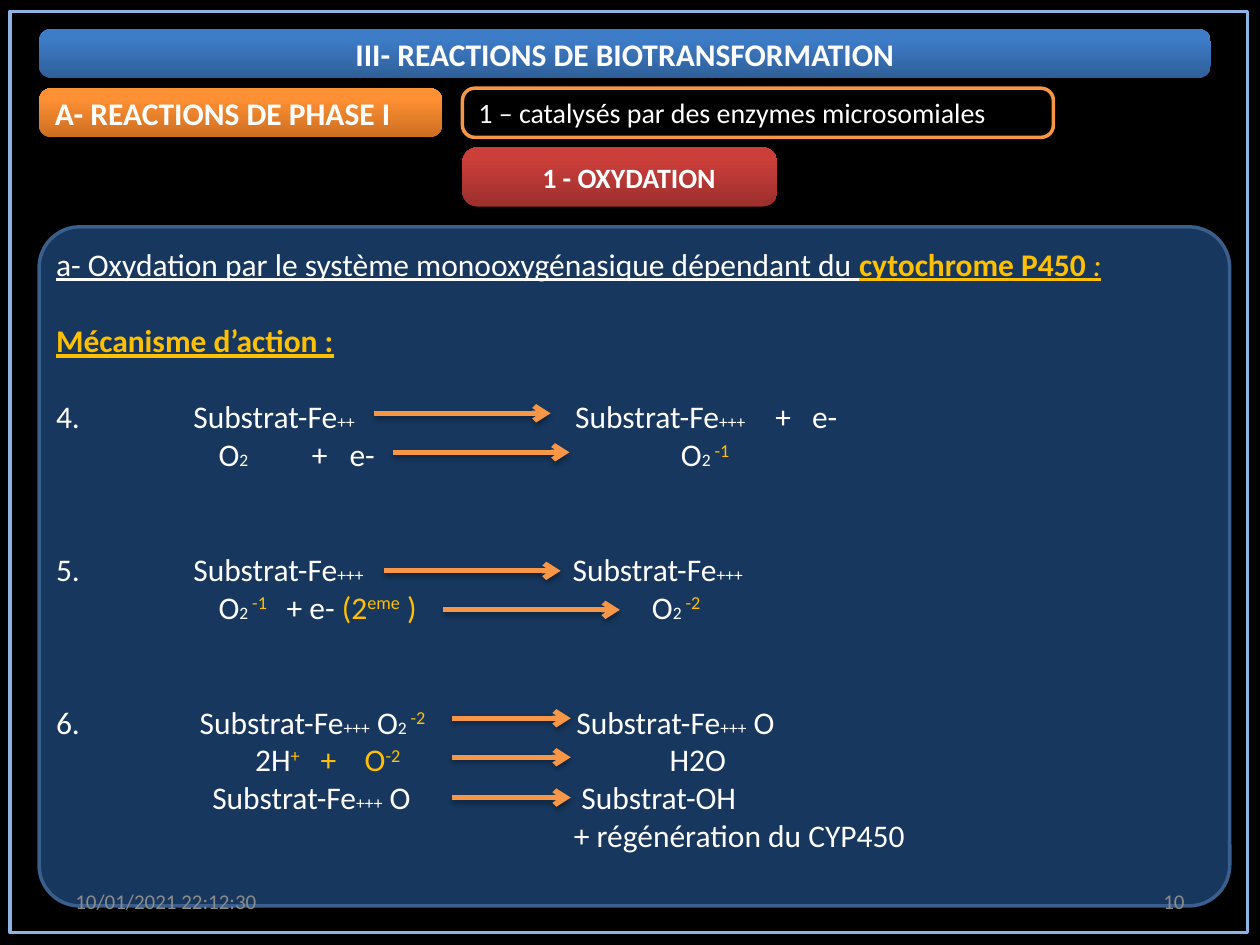
from lxml import etree
from pptx import Presentation
from pptx.dml.color import RGBColor
from pptx.enum.shapes import MSO_CONNECTOR, MSO_SHAPE
from pptx.enum.text import MSO_ANCHOR, PP_ALIGN
from pptx.oxml.ns import qn
from pptx.util import Inches, Pt

BLACK = RGBColor(0x00, 0x00, 0x00)
WHITE = RGBColor(0xFF, 0xFF, 0xFF)
GOLD = RGBColor(0xFF, 0xC0, 0x00)
ORANGE = RGBColor(0xF7, 0x96, 0x46)
FRAME_BLUE = RGBColor(0x8E, 0xB4, 0xE3)
NAVY = RGBColor(0x17, 0x37, 0x5E)
NAVY_EDGE = RGBColor(0x3A, 0x5F, 0x8C)
GREY = RGBColor(0x8C, 0x8C, 0x8C)
BLUE_GRADIENT = RGBColor(0x2F, 0x5F, 0x99), RGBColor(0x3D, 0x7C, 0xC7)
ORANGE_GRADIENT = RGBColor(0xCC, 0x6E, 0x20), RGBColor(0xFF, 0x90, 0x34)
RED_GRADIENT = RGBColor(0x9C, 0x2F, 0x2D), RGBColor(0xCB, 0x3E, 0x3A)

PLAIN = {"size": Pt(18), "color": WHITE}
SMALL = {"size": Pt(10), "color": WHITE}
YELLOW = {"size": Pt(18), "color": GOLD}
RAISED = {**YELLOW, "raised": True}
LINK = {**PLAIN, "underline": True}
KEY = {**YELLOW, "underline": True, "bold": True}
KEY_COLON = {**YELLOW, "underline": True, "italic": True}

BLANK_LINE = 22  # points taken by one 18 pt line
# Each line: blank lines above, tab stops in inches, styled runs
MECHANISM = [
    (0, [], [("a- Oxydation par le système monooxygénasique dépendant du ", LINK),
             ("cytochrome P450", KEY), ("\u00a0:", KEY_COLON)]),
    (1, [], [("Mécanisme d’action :", KEY)]),
    (1, [1.09, 4.12, 5.71, 6.0],
     [("4.\tSubstrat-Fe", PLAIN), ("++", SMALL), ("\tSubstrat-Fe", PLAIN),
      ("+++", SMALL), ("\t+\te-", PLAIN)]),
    (0, [1.29, 2.03, 2.33, 4.96],
     [("\tO", PLAIN), ("2", SMALL), ("\t+\te-\tO", PLAIN), ("2 ", SMALL), ("-1", RAISED)]),
    (2, [1.09, 4.1],
     [("5.\tSubstrat-Fe", PLAIN), ("+++", SMALL), ("\tSubstrat-Fe", PLAIN), ("+++", SMALL)]),
    (0, [1.29, 1.83, 4.73],
     [("\tO", PLAIN), ("2 ", SMALL), ("-1", RAISED), ("\t+ e- ", PLAIN), ("(2", YELLOW),
      ("eme", RAISED), (" )", YELLOW), ("\tO", PLAIN), ("2 ", SMALL), ("-2", RAISED)]),
    (2, [1.14, 4.13],
     [("6.\tSubstrat-Fe", PLAIN), ("+++", SMALL), (" O", PLAIN), ("2 ", SMALL),
      ("-2", RAISED), ("\tSubstrat-Fe", PLAIN), ("+++", SMALL), (" O", PLAIN)]),
    (0, [1.58, 2.1, 2.45, 4.87],
     [("\t2H", PLAIN), ("+", RAISED), ("\t+\tO", YELLOW), ("-2", RAISED), ("\tH2O", PLAIN)]),
    (0, [1.24, 4.17],
     [("\tSubstrat-Fe", PLAIN), ("+++", SMALL), (" O\tSubstrat-OH", PLAIN)]),
    (0, [4.11], [("\t+ régénération du CYP450", PLAIN)]),
]
# Left, height on the slide and length of each reaction arrow
ARROWS = [(2.97, 3.28, 1.4), (3.12, 3.59, 1.4), (3.05, 4.53, 1.4), (3.52, 4.84, 1.4),
          (3.59, 5.7, 0.94), (3.59, 6.01, 0.94), (3.59, 6.33, 0.94)]


def add_run(paragraph, text, style):
    run = paragraph.add_run()
    run.text = text
    run.font.name = "Calibri"
    for name, value in style.items():
        if name == "color":
            run.font.color.rgb = value
        elif name == "raised":
            run.font._element.set("baseline", "30000")
        else:
            setattr(run.font, name, value)


def set_tab_stops(paragraph, stops):
    tabs = etree.SubElement(paragraph._p.get_or_add_pPr(), qn("a:tabLst"))
    for stop in stops:
        etree.SubElement(tabs, qn("a:tab"), pos=str(Inches(stop)), algn="l")


def add_drop_shadow(properties):
    effects = properties.find(qn("a:effectLst"))
    if effects is None:
        effects = etree.SubElement(properties, qn("a:effectLst"))
    shadow = etree.SubElement(effects, qn("a:outerShdw"), blurRad=str(Pt(3.1)),
                              dist=str(Pt(1.8)), dir="5400000", rotWithShape="0")
    color = etree.SubElement(shadow, qn("a:srgbClr"), val=str(BLACK))
    etree.SubElement(color, qn("a:alpha"), val="35000")


def add_panel(slide, box, fill=None, edge=None, corner=None):
    """Adds a box; a pair of colours as fill gives a shadowed upward gradient."""
    kind = MSO_SHAPE.RECTANGLE if corner is None else MSO_SHAPE.ROUNDED_RECTANGLE
    panel = slide.shapes.add_shape(kind, *map(Inches, box))
    panel.shadow.inherit = False
    if corner is not None:
        panel.adjustments[0] = corner
    if fill is None:
        panel.fill.background()
    elif isinstance(fill, RGBColor):
        panel.fill.solid()
        panel.fill.fore_color.rgb = fill
    else:
        panel.fill.gradient()
        panel.fill.gradient_angle = 90
        for stop, color, position in zip(panel.fill.gradient_stops, fill, (0, 0.8)):
            stop.color.rgb = color
            stop.position = position
        add_drop_shadow(panel._element.spPr)
    if edge is None:
        panel.line.fill.background()
    else:
        panel.line.color.rgb = edge
        panel.line.width = Pt(2)
    return panel


def add_heading(slide, box, text, style, fill, edge=None, align=PP_ALIGN.LEFT, inset=0.1):
    frame = add_panel(slide, box, fill, edge, 0.25).text_frame
    frame.margin_left = Inches(inset)
    frame.vertical_anchor = MSO_ANCHOR.MIDDLE
    frame.paragraphs[0].alignment = align
    add_run(frame.paragraphs[0], text, style)


def add_mechanism(slide, box):
    frame = add_panel(slide, box, NAVY, NAVY_EDGE, 0.06).text_frame
    frame.margin_left = Inches(0.04)
    frame.vertical_anchor = MSO_ANCHOR.TOP
    for index, (blanks, stops, runs) in enumerate(MECHANISM):
        line = frame.add_paragraph() if index else frame.paragraphs[0]
        line.alignment = PP_ALIGN.LEFT
        line.space_before = Pt(blanks * BLANK_LINE)
        if stops:
            set_tab_stops(line, stops)
        for text, style in runs:
            add_run(line, text, style)


def add_arrow(slide, left, level, length):
    arrow = slide.shapes.add_connector(MSO_CONNECTOR.STRAIGHT, Inches(left), Inches(level),
                                       Inches(left + length), Inches(level))
    arrow.line.color.rgb = ORANGE
    arrow.line.width = Pt(3)
    etree.SubElement(arrow.line._get_or_add_ln(), qn("a:tailEnd"), type="arrow")
    add_drop_shadow(arrow._element.spPr)


def add_footer(slide, box, text, align):
    frame = slide.shapes.add_textbox(*map(Inches, box)).text_frame
    frame.word_wrap = True
    frame.vertical_anchor = MSO_ANCHOR.MIDDLE
    frame.paragraphs[0].alignment = align
    add_run(frame.paragraphs[0], text, {"size": Pt(12), "color": GREY})


def main():
    presentation = Presentation()
    presentation.slide_width = Inches(10)
    presentation.slide_height = Inches(7.5)
    slide = presentation.slides.add_slide(presentation.slide_layouts[6])
    slide.background.fill.solid()
    slide.background.fill.fore_color.rgb = BLACK

    title = {**PLAIN, "bold": True}
    subtitle = {"size": Pt(16), "color": WHITE}
    add_panel(slide, (0.08, 0.09, 9.82, 7.31), edge=FRAME_BLUE)
    add_heading(slide, (0.31, 0.23, 9.3, 0.39), "III- REACTIONS DE BIOTRANSFORMATION",
                title, BLUE_GRADIENT, align=PP_ALIGN.CENTER)
    add_heading(slide, (0.31, 0.7, 3.2, 0.39), "A- REACTIONS DE PHASE I",
                title, ORANGE_GRADIENT)
    add_heading(slide, (3.67, 0.7, 4.69, 0.39), "1 – catalysés par des enzymes microsomiales",
                subtitle, BLACK, ORANGE)
    add_heading(slide, (3.67, 1.17, 2.5, 0.47), "1 - OXYDATION",
                {**subtitle, "bold": True}, RED_GRADIENT, inset=0.6)
    add_mechanism(slide, (0.31, 1.8, 9.45, 5.39))
    for arrow in ARROWS:
        add_arrow(slide, *arrow)
    add_footer(slide, (0.5, 6.95, 2.33, 0.4), "10/01/2021 22:12:30", PP_ALIGN.LEFT)
    add_footer(slide, (7.17, 6.95, 2.33, 0.4), "10", PP_ALIGN.RIGHT)
    presentation.save("out.pptx")


if __name__ == "__main__":
    main()
